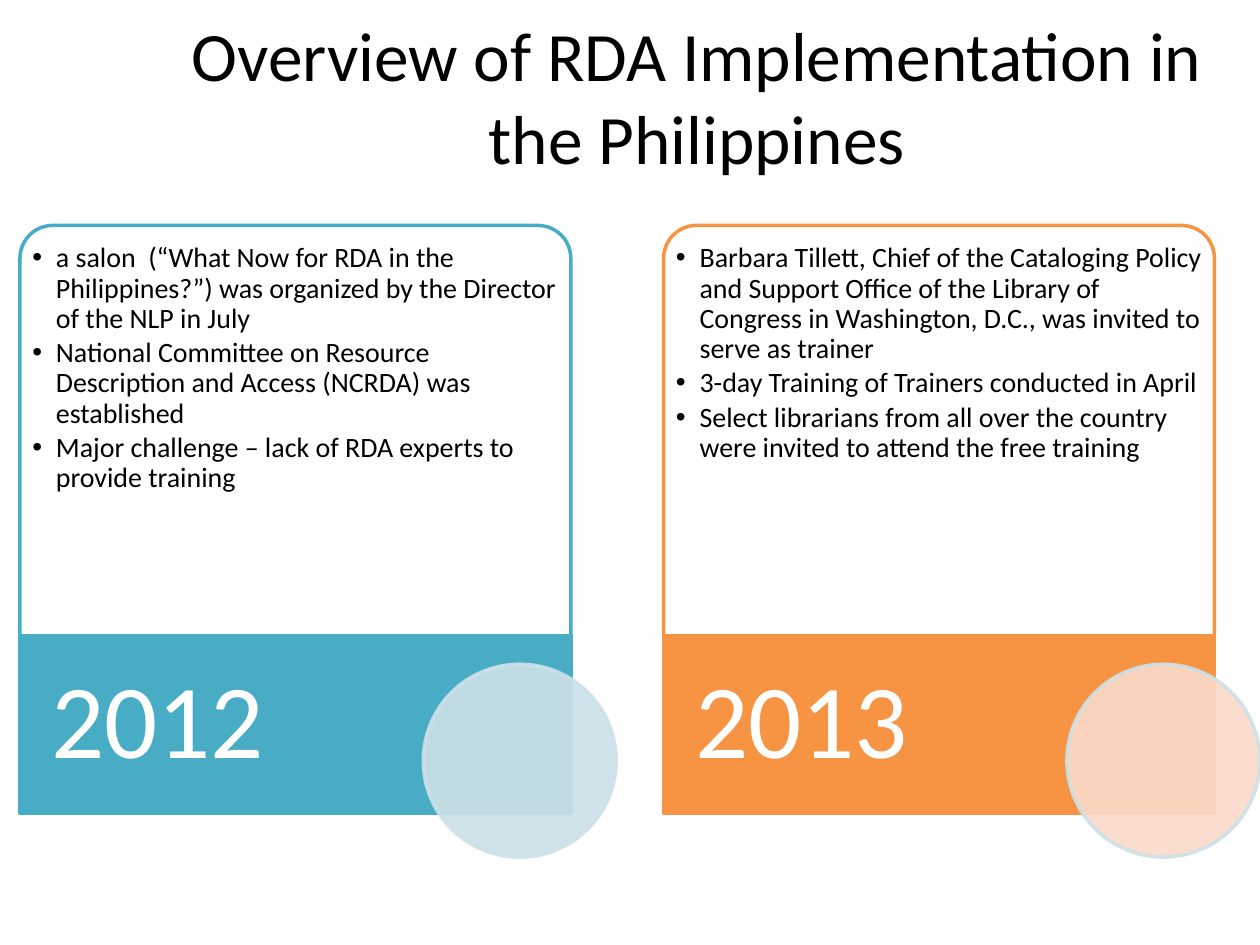
import lxml.etree
import pptx
import pptx.dml.color
import pptx.enum.shapes
import pptx.enum.text
import pptx.oxml.ns
import pptx.util

Pt = pptx.util.Pt
SHAPES = pptx.enum.shapes.MSO_SHAPE
ANCHORS = pptx.enum.text.MSO_ANCHOR
ALIGNMENTS = pptx.enum.text.PP_ALIGN
qn = pptx.oxml.ns.qn

FONT = "Calibri"
COLORS = {
    "black": "000000",
    "white": "FFFFFF",
    "teal": "49ACC5",
    "orange": "F69444",
    "pale_blue": "CDE1E8",
    "pale_orange": "FBDACB",
}
TITLE = "Overview of RDA Implementation in the Philippines"
YEARS = [
    ("2012", "teal", "pale_blue", [
        "a salon  (“What Now for RDA in the Philippines?”) was organized by the Director of the NLP in July",
        "National Committee on Resource Description and Access (NCRDA) was established",
        "Major challenge – lack of RDA experts to provide training",
    ]),
    ("2013", "orange", "pale_orange", [
        "Barbara Tillett, Chief of the Cataloging Policy and Support Office of the Library of Congress "
        "in Washington, D.C., was invited to serve as trainer",
        "3-day Training of Trainers conducted in April",
        "Select librarians from all over the country were invited to attend the free training",
    ]),
]


def rgb(name):
    """Return the named colour."""
    return pptx.dml.color.RGBColor.from_string(COLORS[name])


def set_opacity(color_format_parent, percent):
    """Make the solid colour inside an element partly transparent."""
    color = color_format_parent.find(".//" + qn("a:srgbClr"))
    lxml.etree.SubElement(color, qn("a:alpha"), val=str(percent * 1000))


def add_panel(slide, kind, box, fill, line, opaque_fill=True):
    """Add a filled preset shape with a 2 pt outline."""
    shape = slide.shapes.add_shape(kind, *map(Pt, box))
    shape.shadow.inherit = False
    shape.fill.solid()
    shape.fill.fore_color.rgb = rgb(fill)
    if not opaque_fill:
        set_opacity(shape._element.spPr.find(qn("a:solidFill")), 90)
    shape.line.color.rgb = rgb(line)
    shape.line.width = Pt(2)
    return shape


def add_run(paragraph, text, size, color):
    """Add one run of formatted text."""
    run = paragraph.add_run()
    run.text = text
    run.font.name = FONT
    run.font.size = Pt(size)
    run.font.color.rgb = rgb(color)


def set_frame(frame, anchor, margins):
    """Set wrapping, anchor and left, top, right and bottom margins."""
    frame.word_wrap = True
    frame.vertical_anchor = anchor
    frame.margin_left, frame.margin_top, frame.margin_right, frame.margin_bottom = map(Pt, margins)


def add_bullet(paragraph):
    """Give a paragraph a hanging black bullet."""
    properties = paragraph._p.get_or_add_pPr()
    properties.set("marL", str(Pt(13.5)))
    properties.set("indent", str(-Pt(13.5)))
    color = lxml.etree.SubElement(properties, qn("a:buClr"))
    lxml.etree.SubElement(color, qn("a:srgbClr"), val=COLORS["black"])
    lxml.etree.SubElement(properties, qn("a:buFont"), typeface="Arial")
    lxml.etree.SubElement(properties, qn("a:buChar"), char="•")


def add_title(slide, box):
    """Place and format the title placeholder."""
    title = slide.shapes.title
    title.left, title.top, title.width, title.height = map(Pt, box)
    set_frame(title.text_frame, ANCHORS.MIDDLE, (7.2, 3.6, 7.2, 3.6))
    paragraph = title.text_frame.paragraphs[0]
    paragraph.alignment = ALIGNMENTS.CENTER
    add_run(paragraph, TITLE, 39.6, "black")


def add_events(slide, box, events):
    """Add the bulleted events of one year."""
    frame = slide.shapes.add_textbox(*map(Pt, box)).text_frame
    set_frame(frame, ANCHORS.TOP, (1.7, 5.1, 1.7, 1.7))
    for index, event in enumerate(events):
        paragraph = frame.add_paragraph() if index else frame.paragraphs[0]
        add_bullet(paragraph)
        paragraph.level = 1
        paragraph.line_spacing = 0.9
        paragraph.space_before = Pt(2.4 if index else 0)
        add_run(paragraph, event, 16, "black")


def add_year_card(slide, box, year, accent, circle_fill, events):
    """Add an event panel over a year band with a circle at its corner."""
    left, top, width, height = box
    band_height = 100.9
    panel_height = height - band_height
    band_top = top + panel_height
    diameter = 110.2
    inset = 5.4

    panel = add_panel(slide, SHAPES.ROUND_2_SAME_RECTANGLE,
                      (left, top, width, panel_height), "white", accent, opaque_fill=False)
    panel.adjustments[0] = 0.08
    panel.adjustments[1] = 0
    add_events(slide, (left + inset, top + inset, width - 2 * inset, panel_height - inset), events)

    add_panel(slide, SHAPES.RECTANGLE, (left, band_top, width, band_height), accent, accent)
    frame = slide.shapes.add_textbox(*map(Pt, (left, band_top, 221.8, band_height))).text_frame
    set_frame(frame, ANCHORS.MIDDLE, (18, 0, 6, 0))
    frame.paragraphs[0].line_spacing = 0.9
    add_run(frame.paragraphs[0], year, 60, "white")

    circle = add_panel(slide, SHAPES.OVAL, (left + 230.5, band_top + 16, diameter, diameter),
                       circle_fill, "pale_blue", opaque_fill=False)
    set_opacity(circle.line._ln, 90)


def main():
    """Build the slide and save it."""
    presentation = pptx.Presentation()
    presentation.slide_width, presentation.slide_height = Pt(720), Pt(540)
    slide = presentation.slides.add_slide(presentation.slide_layouts[5])
    add_title(slide, (88, 15, 620.5, 78.5))
    for index, year in enumerate(YEARS):
        add_year_card(slide, (11.4 + index * 367.8, 128.8, 314.8, 335.7), *year)
    presentation.save("out.pptx")


if __name__ == "__main__":
    main()
